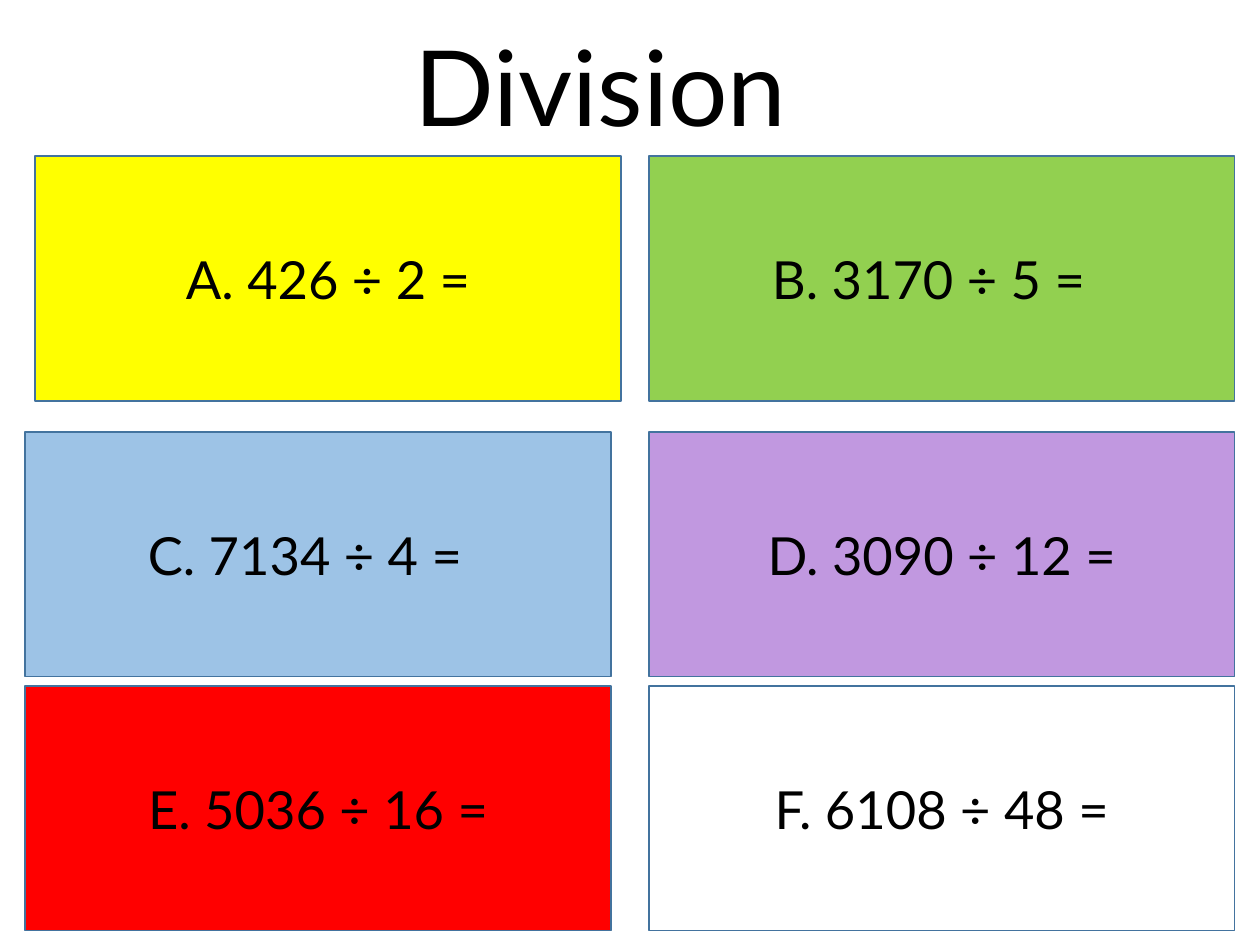
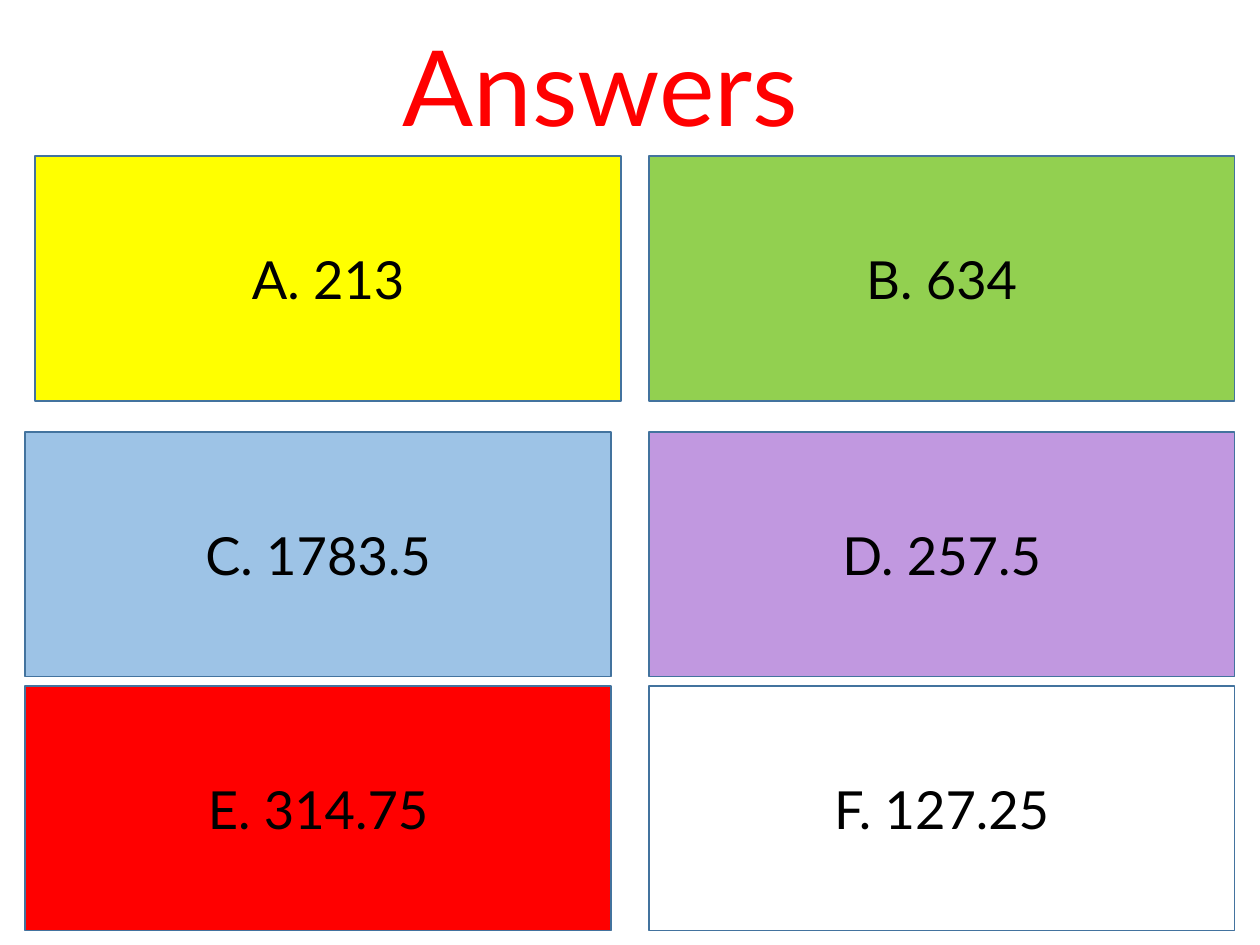
from dataclasses import dataclass

from pptx import Presentation
from pptx.dml.color import RGBColor
from pptx.enum.shapes import MSO_SHAPE
from pptx.enum.text import MSO_ANCHOR, MSO_AUTO_SIZE, PP_ALIGN
from pptx.util import Cm, Pt

RECTANGLE = MSO_SHAPE.RECTANGLE
CENTER = PP_ALIGN.CENTER
MIDDLE = MSO_ANCHOR.MIDDLE
GROW = MSO_AUTO_SIZE.SHAPE_TO_FIT_TEXT


@dataclass(frozen=True)
class Theme:
    font: str = "Lato"
    title_size: int = 60
    card_size: int = 30
    black: str = "000000"
    red: str = "FF0000"
    outline: str = "43739E"
    # Card fills A to F; the last card has none
    fills: tuple = ("FFFF00", "92D050", "9DC3E6", "C198E0", "FF0000", None)


THEME = Theme()

# Card grid in cm: the first row is set in a little further on the left
CARD_W, CARD_H = 11.81, 4.93
RIGHT_COL = 13.08
LEFT_COL = (0.71, 0.51, 0.51)
ROW_TOPS = (3.15, 8.71, 13.83)
INSET, WIDE_INSET = 0.25, 0.78

# Title, title colour, card texts, letters whose text sits left of centre
SLIDES = [
    ("Division", THEME.black,
     ["426 ÷ 2 =", "3170 ÷ 5 =", "7134 ÷ 4 =",
      "3090 ÷ 12 =", "5036 ÷ 16 =", "6108 ÷ 48 ="], "BC"),
    ("Answers", THEME.red,
     ["213", "634", "1783.5", "257.5", "314.75", "127.25"], ""),
]


def write(tf, text, size, color):
    """Put one centred line into a text frame."""
    p = tf.paragraphs[0]
    p.alignment = CENTER
    r = p.add_run()
    r.text = text
    r.font.color.rgb = RGBColor.from_string(color)
    for name, value in {"name": THEME.font, "size": Pt(size)}.items():
        setattr(r.font, name, value)


def add_title(s, text, color):
    tf = s.shapes.add_textbox(Cm(3.28), Cm(0.3), Cm(17.65), Cm(2.82)).text_frame
    tf.word_wrap = True
    tf.auto_size = GROW
    write(tf, text, THEME.title_size, color)


def add_card(s, left, top, text, fill, right_inset):
    sp = s.shapes.add_shape(RECTANGLE, Cm(left), Cm(top), Cm(CARD_W), Cm(CARD_H))
    sp.shadow.inherit = False
    if fill:
        sp.fill.solid()
        sp.fill.fore_color.rgb = RGBColor.from_string(fill)
    else:
        sp.fill.background()
    sp.line.color.rgb = RGBColor.from_string(THEME.outline)
    sp.line.width = Pt(1)
    tf = sp.text_frame
    frame = {"word_wrap": True, "vertical_anchor": MIDDLE,
             "margin_left": Cm(INSET), "margin_right": Cm(right_inset)}
    for name, value in frame.items():
        setattr(tf, name, value)
    write(tf, text, THEME.card_size, THEME.black)


def add_cards(s, texts, shifted):
    """Lay the cards out in two columns, lettered from A."""
    for i, (letter, text, fill) in enumerate(zip("ABCDEF", texts, THEME.fills)):
        row, col = divmod(i, 2)
        left = RIGHT_COL if col else LEFT_COL[row]
        right_inset = WIDE_INSET if letter in shifted else INSET
        add_card(s, left, ROW_TOPS[row], f"{letter}. {text}", fill, right_inset)


def main():
    prs = Presentation()
    prs.slide_width, prs.slide_height = Cm(25.4), Cm(19.05)
    blank = prs.slide_layouts[6]
    for title, color, texts, shifted in SLIDES:
        s = prs.slides.add_slide(blank)
        add_title(s, title, color)
        add_cards(s, texts, shifted)
    prs.save("out.pptx")


if __name__ == "__main__":
    main()
